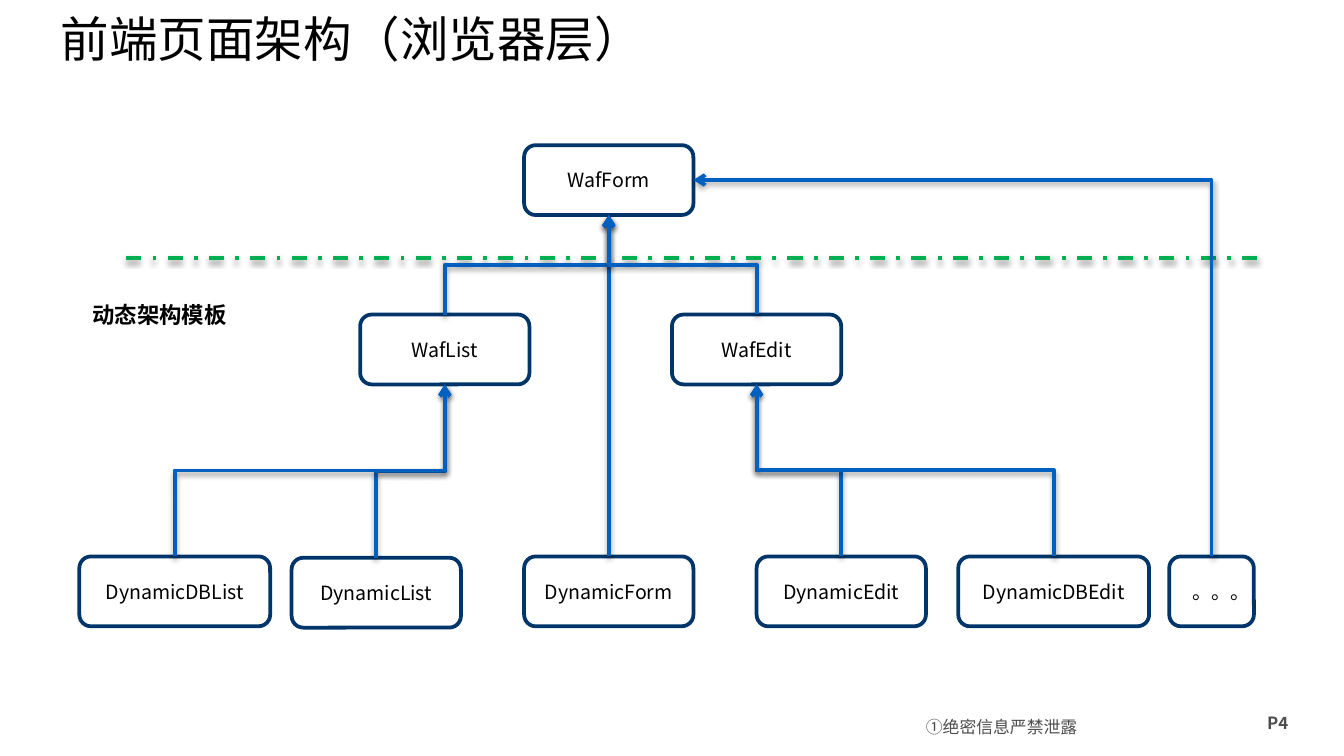
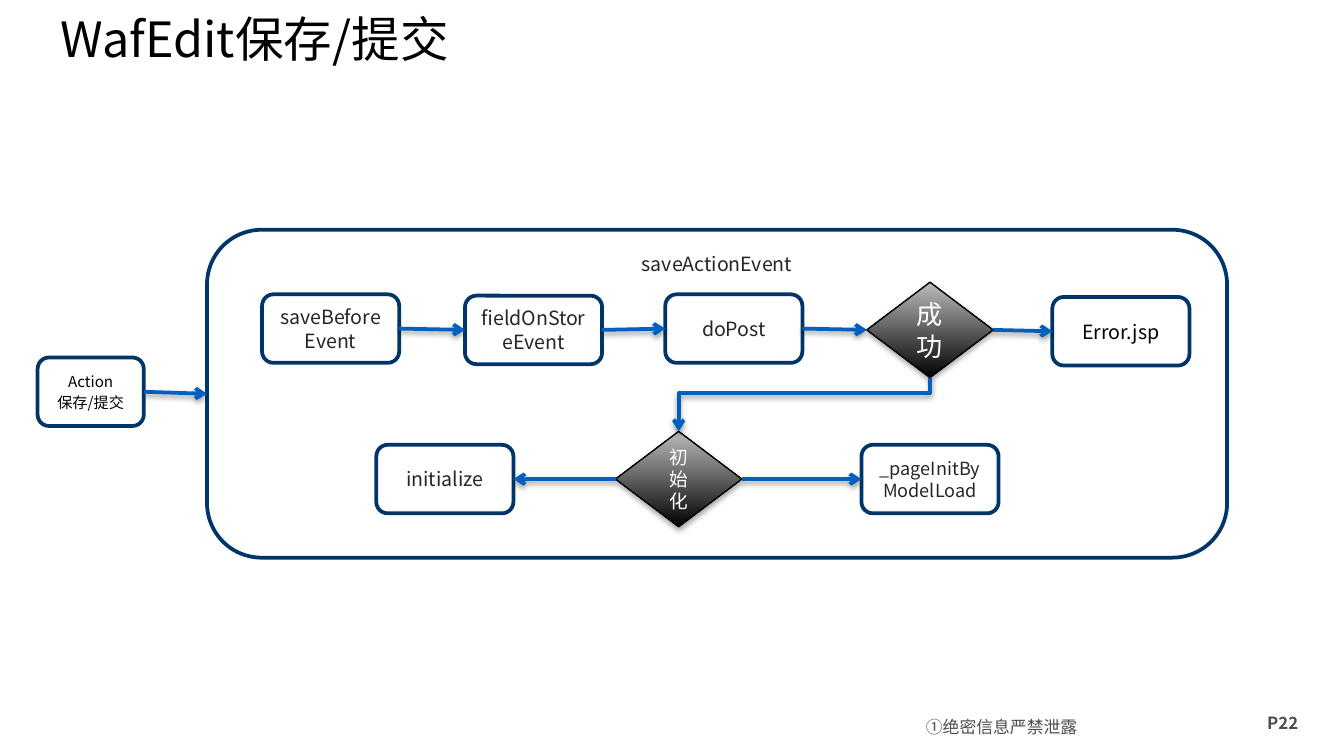
from lxml import etree
from pptx import Presentation
from pptx.dml.color import RGBColor
from pptx.enum.dml import MSO_LINE
from pptx.enum.shapes import MSO_CONNECTOR, MSO_SHAPE
from pptx.enum.text import MSO_ANCHOR, MSO_AUTO_SIZE, PP_ALIGN
from pptx.oxml.ns import qn
from pptx.util import Inches, Pt

ROUNDED = MSO_SHAPE.ROUNDED_RECTANGLE
DECISION = MSO_SHAPE.FLOWCHART_DECISION
STRAIGHT, ELBOW = MSO_CONNECTOR.STRAIGHT, MSO_CONNECTOR.ELBOW
DASH_DOT = MSO_LINE.DASH_DOT
MIDDLE, TOP_ANCHOR = MSO_ANCHOR.MIDDLE, MSO_ANCHOR.TOP
LEFT_ALIGN, CENTER, JUSTIFY = PP_ALIGN.LEFT, PP_ALIGN.CENTER, PP_ALIGN.JUSTIFY
NO_AUTOFIT = MSO_AUTO_SIZE.NONE

NAVY = RGBColor(0x00, 0x35, 0x6A)
BLUE = RGBColor(0x00, 0x60, 0xC0)
GREEN = RGBColor(0x00, 0xB0, 0x50)
BLACK = RGBColor(0x00, 0x00, 0x00)
WHITE = RGBColor(0xFF, 0xFF, 0xFF)
SILVER = RGBColor(0xBD, 0xBD, 0xBD)
CHARCOAL = RGBColor(0x26, 0x26, 0x26)
GRAY = RGBColor(0x4D, 0x4D, 0x4D)

SANS = "Noto Sans CJK SC"
LATIN = "Calibri"
SLIDE_WIDTH = Inches(10)
SLIDE_HEIGHT = SLIDE_WIDTH * 9 // 16
LINE_WIDTH = Pt(2)
TITLE_ONLY = 5

# Connection sites of rectangles and diamonds
TOP, LEFT, BOTTOM, RIGHT = range(4)


def set_text(shape, text, size, color, align=LEFT_ALIGN, bold=False, font=SANS):
    frame = shape.text_frame
    frame.text = text
    frame.word_wrap = True
    for paragraph in frame.paragraphs:
        paragraph.alignment = align
        for run in paragraph.runs:
            run.font.name = font
            run.font.size = Pt(size)
            run.font.bold = bold
            run.font.color.rgb = color
            east_asian = etree.SubElement(run.font._element, qn("a:ea"))
            east_asian.set("typeface", SANS)
    for paragraph in frame.paragraphs[1:]:
        paragraph.space_before = Pt(size * 0.2)


def set_insets(shape, x, y):
    frame = shape.text_frame
    frame.margin_left = frame.margin_right = Inches(x)
    frame.margin_top = frame.margin_bottom = Inches(y)


def add_shadow(shape, opacity):
    properties = shape._element.spPr
    for effects in properties.findall(qn("a:effectLst")):
        properties.remove(effects)
    effects = etree.SubElement(properties, qn("a:effectLst"))
    shadow = etree.SubElement(effects, qn("a:outerShdw"), blurRad=str(Pt(3.1)),
                              dist=str(Pt(1.6)), dir="5400000", rotWithShape="0")
    color = etree.SubElement(shadow, qn("a:srgbClr"), val=str(BLACK))
    etree.SubElement(color, qn("a:alpha"), val=str(opacity * 1000))


def add_label(slide, text, left, top, width, height, size, color, **style):
    label = slide.shapes.add_textbox(Inches(left), Inches(top), Inches(width), Inches(height))
    set_text(label, text, size, color, **style)
    return label


def add_box(slide, text, left, top, width, height, size=10.5, color=BLACK, anchor=MIDDLE):
    box = slide.shapes.add_shape(ROUNDED, Inches(left), Inches(top),
                                 Inches(width), Inches(height))
    box.shadow.inherit = False
    box.fill.solid()
    box.fill.fore_color.rgb = WHITE
    box.line.color.rgb = NAVY
    box.line.width = LINE_WIDTH
    set_text(box, text, size, color, CENTER)
    box.text_frame.vertical_anchor = anchor
    return box


def add_decision(slide, text, left, top, size):
    diamond = slide.shapes.add_shape(DECISION, Inches(left), Inches(top),
                                     Inches(0.94), Inches(0.71))
    diamond.fill.gradient()
    diamond.fill.gradient_angle = 90
    for stop, color, position in zip(diamond.fill.gradient_stops, (BLACK, SILVER), (0, 1)):
        stop.color.rgb = color
        stop.position = position
    diamond.line.color.rgb = BLACK
    diamond.line.width = Pt(0.75)
    add_shadow(diamond, 35)
    set_text(diamond, text, size, WHITE, CENTER, font=LATIN)
    diamond.text_frame.vertical_anchor = MIDDLE
    return diamond


def style_line(connector, color):
    connector.line.color.rgb = color
    connector.line.width = LINE_WIDTH
    add_shadow(connector, 38)


def add_arrow(slide, start, start_site, end, end_site, kind=STRAIGHT):
    arrow = slide.shapes.add_connector(kind, 0, 0, 0, 0)
    arrow.begin_connect(start, start_site)
    arrow.end_connect(end, end_site)
    style_line(arrow, BLUE)
    etree.SubElement(arrow.line._get_or_add_ln(), qn("a:tailEnd"), type="arrow")
    return arrow


def add_elbow(slide, start, start_site, end, end_site, bend=None):
    """Add an arrow that leaves its start vertically, turning once if it ends at a side."""
    arrow = add_arrow(slide, start, start_site, end, end_site, ELBOW)
    dx, dy = arrow.end_x - arrow.begin_x, arrow.end_y - arrow.begin_y
    center_x = (arrow.begin_x + arrow.end_x) // 2
    center_y = (arrow.begin_y + arrow.end_y) // 2
    arrow.width, arrow.height = abs(dy), abs(dx)
    arrow.left, arrow.top = center_x - abs(dy) // 2, center_y - abs(dx) // 2

    transform = arrow._element.spPr.find(qn("a:xfrm"))
    for flip in ("flipH", "flipV"):
        transform.attrib.pop(flip, None)
    transform.set("rot", "5400000" if dy > 0 else "16200000")
    if (dx > 0) == (dy > 0):
        transform.set("flipV", "1")

    geometry = arrow._element.spPr.find(qn("a:prstGeom"))
    if end_site in (LEFT, RIGHT):
        geometry.set("prst", "bentConnector2")
    if bend is not None:
        adjustments = geometry.find(qn("a:avLst"))
        etree.SubElement(adjustments, qn("a:gd"), name="adj1",
                         fmla=f"val {round(bend * 100000)}")


def add_page(deck, heading, number):
    """Add a slide with the shared title, confidentiality notice and page number."""
    slide = deck.slides.add_slide(deck.slide_layouts[TITLE_ONLY])
    title = slide.shapes.title
    title.left, title.top = Inches(0.35), Inches(0)
    title.width, title.height = Inches(7.8), Inches(0.57)
    set_text(title, heading, 26, BLACK)
    set_insets(title, 0.1, 0.05)
    title.text_frame.auto_size = NO_AUTOFIT
    title.text_frame.vertical_anchor = MIDDLE

    notice = add_label(slide, "①绝密信息严禁泄露", 6.81, 5.28, 1.77, 0.27, 9, GRAY, align=JUSTIFY)
    set_insets(notice, 0.08, 0.01)
    notice.text_frame.paragraphs[0].line_spacing = Pt(14)
    add_label(slide, f"P{number}", 9.33, 5.25, 0.56, 0.25, 9, GRAY, bold=True)
    return slide


def add_class_tree(slide, left, top):
    box_width, wide_width, box_height = 1.26, 1.42, 0.52
    template_top, leaf_top = top + 1.26, top + 3.06

    def class_box(name, x, y, width=box_width):
        return add_box(slide, name, left + x, y, width, box_height)

    form = class_box("WafForm", 3.31, top)
    waf_list = class_box("WafList", 2.09, template_top)
    waf_edit = class_box("WafEdit", 4.41, template_top)
    db_list = class_box("DynamicDBList", 0, leaf_top, wide_width)
    dynamic_list = class_box("DynamicList", 1.58, leaf_top + 0.01)
    dynamic_form = class_box("DynamicForm", 3.31, leaf_top)
    dynamic_edit = class_box("DynamicEdit", 5.04, leaf_top)
    db_edit = class_box("DynamicDBEdit", 6.54, leaf_top, wide_width)
    others = class_box("。。。", 8.11, leaf_top, 0.63)

    add_label(slide, "动态架构模板", left, top + 1.11, 1.34, 0.3, 12, BLACK, bold=True)
    divider_y = Inches(top + 0.84)
    divider = slide.shapes.add_connector(STRAIGHT, Inches(left + 0.35), divider_y,
                                         Inches(left + 8.78), divider_y)
    style_line(divider, GREEN)
    divider.line.dash_style = DASH_DOT

    add_arrow(slide, dynamic_form, TOP, form, BOTTOM)
    for child, parent in ((waf_list, form), (waf_edit, form),
                          (dynamic_list, waf_list), (db_list, waf_list),
                          (dynamic_edit, waf_edit), (db_edit, waf_edit)):
        add_elbow(slide, child, TOP, parent, BOTTOM)
    add_elbow(slide, others, TOP, form, RIGHT)


def add_save_flow(slide, left, top, width, height):
    step_width, step_height = 1.02, 0.51

    def step(name, x, y, size=10.5, color=CHARCOAL):
        return add_box(slide, name, left + x, top + y, step_width, step_height, size, color)

    action = add_box(slide, "Action\n保存/提交", left - 1.26, top + 0.95, 0.79, step_height, 8.1)
    event = add_box(slide, "saveActionEvent", left, top, width, height,
                    color=CHARCOAL, anchor=TOP_ANCHOR)
    before = step("saveBeforeEvent", 0.41, 0.48)
    store = step("fieldOnStoreEvent", 1.92, 0.49)
    post = step("doPost", 3.41, 0.48)
    success = add_decision(slide, "成功", left + 4.91, top + 0.39, 14)
    error = step("Error.jsp", 6.29, 0.5, color=BLACK)
    initial = add_decision(slide, "初始化", left + 3.04, top + 1.5, 10)
    initialize = step("initialize", 1.26, 1.6)
    model_load = step("_pageInitByModelLoad", 4.87, 1.6, 9.7)

    for start, end in ((action, event), (before, store), (store, post),
                       (post, success), (success, error), (initial, model_load)):
        add_arrow(slide, start, RIGHT, end, LEFT)
    add_arrow(slide, initial, LEFT, initialize, RIGHT)
    add_elbow(slide, success, BOTTOM, initial, TOP, bend=0.29)


def main():
    deck = Presentation()
    deck.slide_width, deck.slide_height = SLIDE_WIDTH, SLIDE_HEIGHT
    add_class_tree(add_page(deck, "前端页面架构（浏览器层）", 4), 0.59, 1.08)
    add_save_flow(add_page(deck, "WafEdit保存/提交", 22), 1.54, 1.71, 7.59, 2.44)
    deck.save("out.pptx")


if __name__ == "__main__":
    main()
